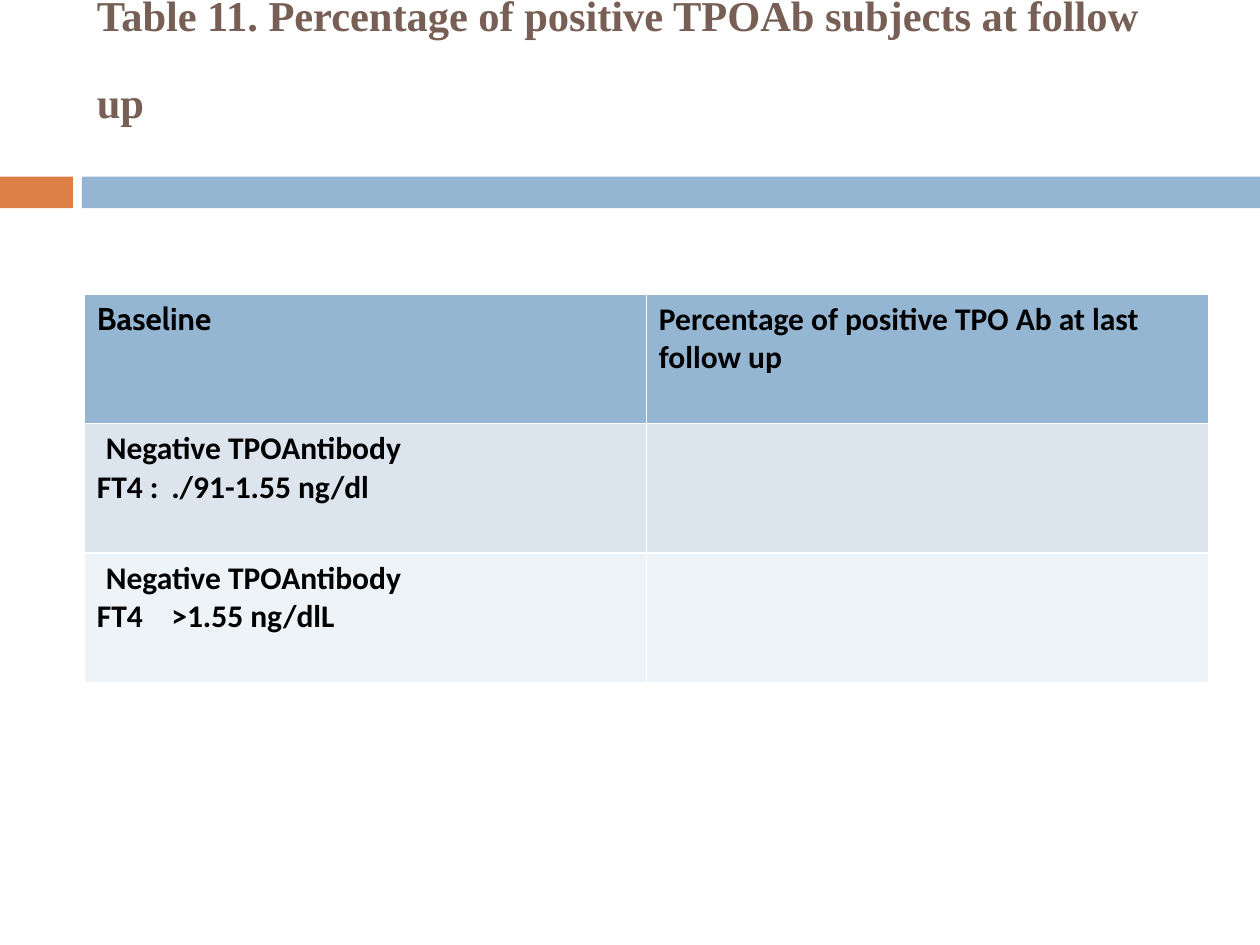
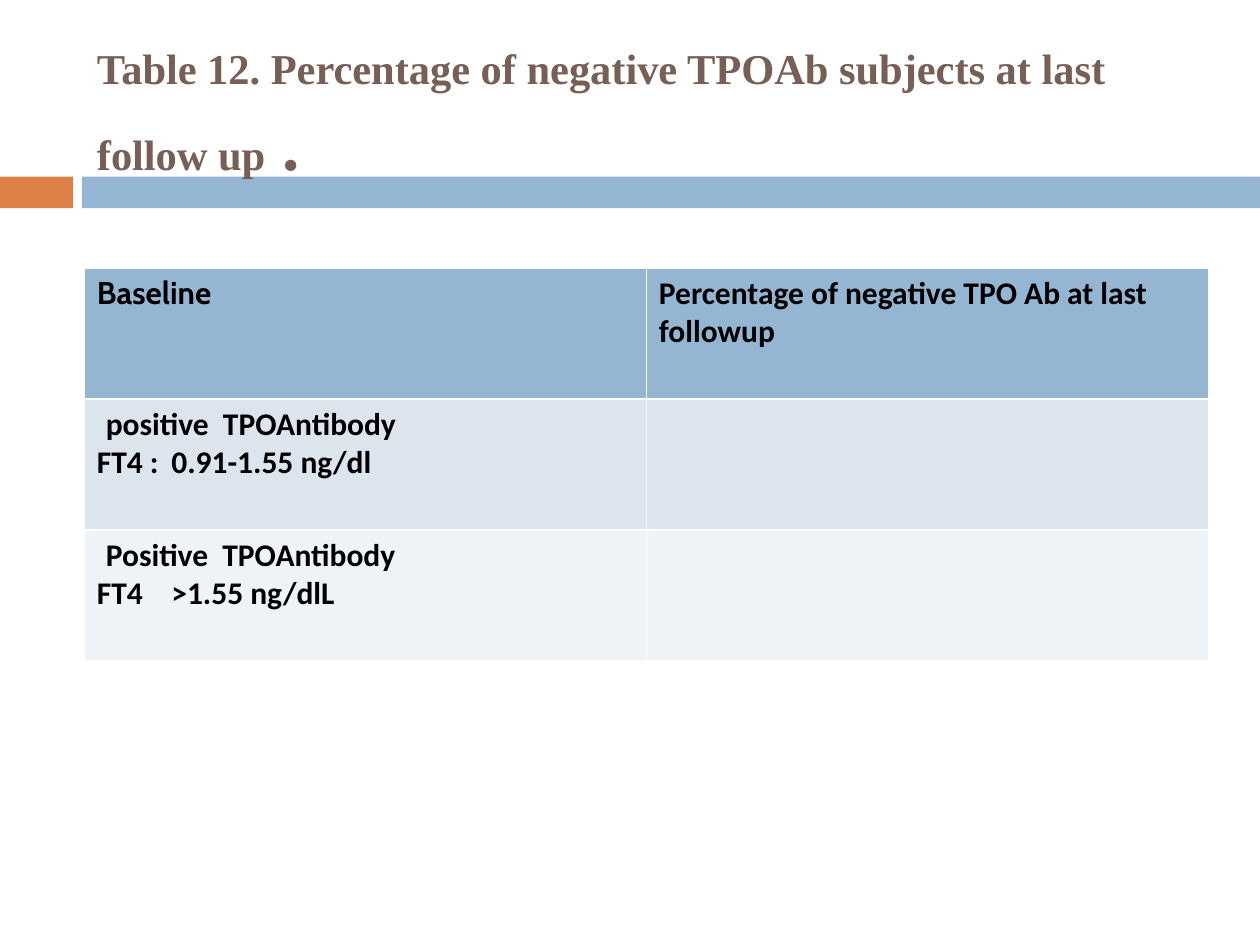
from lxml.etree import SubElement
from pptx import Presentation
from pptx.dml.color import RGBColor
from pptx.enum.shapes import MSO_SHAPE
from pptx.enum.text import MSO_ANCHOR, MSO_AUTO_SIZE, PP_ALIGN
from pptx.oxml.ns import qn
from pptx.util import Cm, Pt

# Colours
BROWN = RGBColor(0x77, 0x5F, 0x55)
ORANGE = RGBColor(0xDD, 0x80, 0x47)
BLUE = RGBColor(0x94, 0xB6, 0xD2)
LIGHT_BLUE = RGBColor(0xDC, 0xE5, 0xEE)
PALE_BLUE = RGBColor(0xEE, 0xF3, 0xF7)
BLACK = RGBColor(0, 0, 0)

# Shared measures and text formats
LEFT, WIDTH = Cm(1.7), Cm(22.66)
TITLE_HEIGHT = Cm(2.74)
BAND_TOP, BAND_HEIGHT = Cm(3.56), Cm(0.64)
NAME_INDENT, VALUE_TAB = Cm(0.18), Cm(1.5)
TITLE_FONT = {"name": "Times New Roman", "size": Pt(24.3), "bold": True}
TAIL_FONT = {**TITLE_FONT, "size": Pt(39.6)}
CELL_FONT = {"name": "Calibri", "size": Pt(18), "bold": True}
CORNER_FONT = {**CELL_FONT, "name": "Cabin"}


class Deck:
    """Holds the style and the current slide."""

    def __init__(self):
        self.presentation = Presentation()
        self.presentation.slide_width = Cm(25.4)
        self.presentation.slide_height = Cm(19.05)
        self.slide = None

    def new_slide(self):
        title_only = self.presentation.slide_layouts[5]
        self.slide = self.presentation.slides.add_slide(title_only)
        self.band(Cm(0), Cm(1.47), ORANGE)
        self.band(Cm(1.65), Cm(23.75), BLUE)

    def band(self, left, width, color):
        band = self.slide.shapes.add_shape(
            MSO_SHAPE.RECTANGLE, left, BAND_TOP, width, BAND_HEIGHT)
        band.shadow.inherit = False
        band.fill.solid()
        band.fill.fore_color.rgb = color
        band.line.fill.background()

    def run(self, paragraph, text, font_format, color):
        run = paragraph.add_run()
        run.text = text
        for key, value in font_format.items():
            setattr(run.font, key, value)
        run.font.color.rgb = color

    def title(self, heading, tail, top):
        title = self.slide.shapes.title
        place = {"left": LEFT, "top": top, "width": WIDTH, "height": TITLE_HEIGHT}
        for key, value in place.items():
            setattr(title, key, value)
        frame = title.text_frame
        frame.auto_size = MSO_AUTO_SIZE.NONE
        frame.vertical_anchor = MSO_ANCHOR.MIDDLE
        paragraph = frame.paragraphs[0]
        paragraph.alignment = PP_ALIGN.LEFT
        paragraph.line_spacing = 1.1
        self.run(paragraph, heading, TITLE_FONT, BROWN)
        self.run(paragraph, tail, TAIL_FONT, BROWN)
        # The closing line break is as tall as the tail
        paragraph.add_line_break()
        tail_size = str(TAIL_FONT["size"].centipoints)
        line_break = paragraph._p.find(qn("a:br"))
        SubElement(line_break, qn("a:rPr"), sz=tail_size)
        SubElement(paragraph._p, qn("a:endParaRPr"), sz=tail_size)
        # Bring the title in front of the bands
        self.slide.shapes._spTree.append(title._element)

    def group_cell(self, cell, antibody, level):
        """Antibody name, then the FT4 level set at a tab stop."""
        frame = cell.text_frame
        lines = [(antibody, NAME_INDENT), (level, 0)]
        for number, (text, indent) in enumerate(lines):
            paragraph = frame.add_paragraph() if number else frame.paragraphs[0]
            properties = paragraph._p.get_or_add_pPr()
            properties.set("marL", str(indent))
            stops = SubElement(properties, qn("a:tabLst"))
            SubElement(stops, qn("a:tab"), pos=str(VALUE_TAB), algn="l")
            self.run(paragraph, text, CELL_FONT, BLACK)

    def table(self, outcome, groups, top, row_height):
        table = self.slide.shapes.add_table(
            len(groups) + 1, 2, LEFT, top, WIDTH,
            row_height * (len(groups) + 1)).table
        for row, color in zip(table.rows, (BLUE, LIGHT_BLUE, PALE_BLUE)):
            row.height = row_height
            for cell in row.cells:
                cell.fill.solid()
                cell.fill.fore_color.rgb = color
        headers = [("Baseline", CORNER_FONT), (outcome, CELL_FONT)]
        for column, (text, font_format) in enumerate(headers):
            paragraph = table.cell(0, column).text_frame.paragraphs[0]
            self.run(paragraph, text, font_format, BLACK)
        for number, (antibody, level) in enumerate(groups, 1):
            self.group_cell(table.cell(number, 0), antibody, level)


def main():
    deck = Deck()

    # Positive subjects at follow up
    deck.new_slide()
    deck.title("Table 11. Percentage of positive TPOAb subjects at follow up",
               " ", Cm(0.64))
    deck.table("Percentage of positive TPO Ab at last follow up",
               [("Negative TPOAntibody", "FT4 :\t./91-1.55 ng/dl"),
                ("Negative TPOAntibody", "FT4\t>1.55 ng/dlL")],
               Cm(5.93), Cm(2.61))

    # Negative subjects at last follow up
    deck.new_slide()
    deck.table("Percentage of negative TPO Ab at last followup",
               [("positive  TPOAntibody", "FT4 :\t0.91-1.55 ng/dl"),
                ("Positive  TPOAntibody", "FT4\t>1.55 ng/dlL")],
               Cm(5.4), Cm(2.64))
    deck.title("Table 12. Percentage of negative TPOAb subjects at last follow up",
               " .", Cm(1.7))

    deck.presentation.save("out.pptx")


if __name__ == "__main__":
    main()
